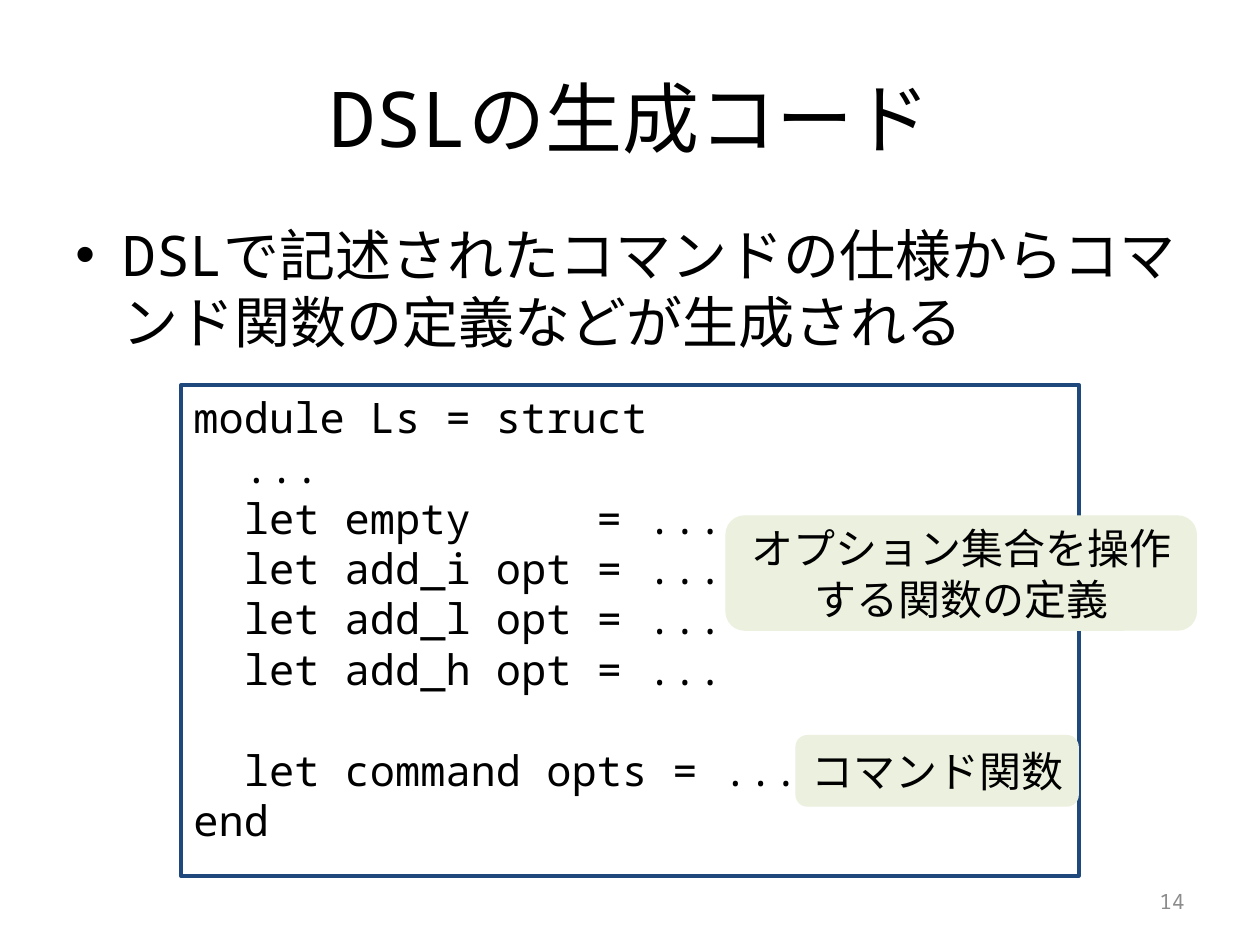
from lxml.etree import SubElement as Sub
from pptx import Presentation
from pptx.dml.color import RGBColor
from pptx.enum.shapes import MSO_SHAPE as Kind
from pptx.enum.text import MSO_ANCHOR as Anchor, PP_ALIGN as Align
from pptx.oxml.ns import qn
from pptx.util import Pt

FONT = "Noto Sans Mono"
CHAR = 14.4  # advance of one 24 pt character
CODE = [
    "module Ls = struct",
    "\t...",
    "\tlet empty\t= ...",
    "\tlet add_i opt = ...",
    "\tlet add_l opt = ...",
    "\tlet add_h opt = ...",
    "\tlet command opts = ...",
    "end",
]


def color(code):
    return RGBColor.from_string(code)


def place(shape, box):
    shape.left, shape.top, shape.width, shape.height = map(Pt, box)


def write(shape, *lines, size=24, ink="000000", align=Align.LEFT,
          anchor=Anchor.TOP, pad=(7.2, 3.6)):
    frame = shape.text_frame
    frame.word_wrap = True
    frame.vertical_anchor = anchor
    frame.margin_left = frame.margin_right = Pt(pad[0])
    frame.margin_top = frame.margin_bottom = Pt(pad[1])
    for i, line in enumerate(lines):
        para = frame.add_paragraph() if i else frame.paragraphs[0]
        para.alignment = align
        run = para.add_run()
        run.text = line
        font = run.font
        font.name, font.size = FONT, Pt(size)
        font.color.rgb = color(ink)
        Sub(run._r.get_or_add_rPr(), qn("a:ea"), typeface=FONT)
    return frame.paragraphs


def text(slide, box, *lines, **form):
    return write(slide.shapes.add_textbox(*map(Pt, box)), *lines, **form)


def panel(slide, kind, box, fill=None, line=None):
    shape = slide.shapes.add_shape(kind, *map(Pt, box))
    shape.shadow.inherit = False
    if fill:
        shape.fill.solid()
        shape.fill.fore_color.rgb = color(fill)
    else:
        shape.fill.background()
    if line:
        shape.line.color.rgb = color(line)
        shape.line.width = Pt(2.25)
    else:
        shape.line.fill.background()
    return shape


def bullet(para, indent):
    props = para._p.get_or_add_pPr()
    props.set("marL", str(Pt(indent)))
    props.set("indent", str(-Pt(indent)))
    Sub(props, qn("a:buFont"), typeface="Arial")
    Sub(props, qn("a:buChar"), char="•")


def tabs(para, *stops):
    stop_list = Sub(para._p.get_or_add_pPr(), qn("a:tabLst"))
    for stop in stops:
        Sub(stop_list, qn("a:tab"), pos=str(Pt(stop)), algn="l")


def label(slide, box, words):
    shape = panel(slide, Kind.ROUNDED_RECTANGLE, box, fill="EBF1DE")
    write(shape, words, align=Align.CENTER, anchor=Anchor.MIDDLE, pad=(5, 3))


def main():
    deck = Presentation()
    deck.slide_width, deck.slide_height = Pt(720), Pt(540)
    slide = deck.slides.add_slide(deck.slide_layouts[5])

    # Title and page number
    title = slide.shapes.title
    place(title, (36, 21.6, 648, 90))
    write(title, "DSLの生成コード", size=44, align=Align.CENTER,
          anchor=Anchor.MIDDLE)
    text(slide, (516, 500.5, 168, 28.8), "14", size=12, ink="8C8C8C",
         align=Align.RIGHT, anchor=Anchor.MIDDLE)

    # Main point
    point = text(slide, (36, 122.4, 648, 82.8),
                 "DSLで記述されたコマンドの仕様からコマンド関数の定義などが生成される",
                 size=32)[0]
    point.space_before = Pt(6.4)
    bullet(point, 27)

    # Generated code: tab stops at columns 2 and 16
    frame = panel(slide, Kind.RECTANGLE, (103.5, 220, 513, 280.5),
                  line="1F497D")
    code = write(frame, *CODE)
    code[-2].space_before = Pt(28.8)
    for para in code:
        tabs(para, 2 * CHAR, 16 * CHAR)

    # Notes on the code
    label(slide, (454.5, 420, 162, 41), "コマンド関数")
    label(slide, (414.5, 294.5, 269.5, 66), "オプション集合を操作する関数の定義")

    deck.save("out.pptx")


if __name__ == "__main__":
    main()
